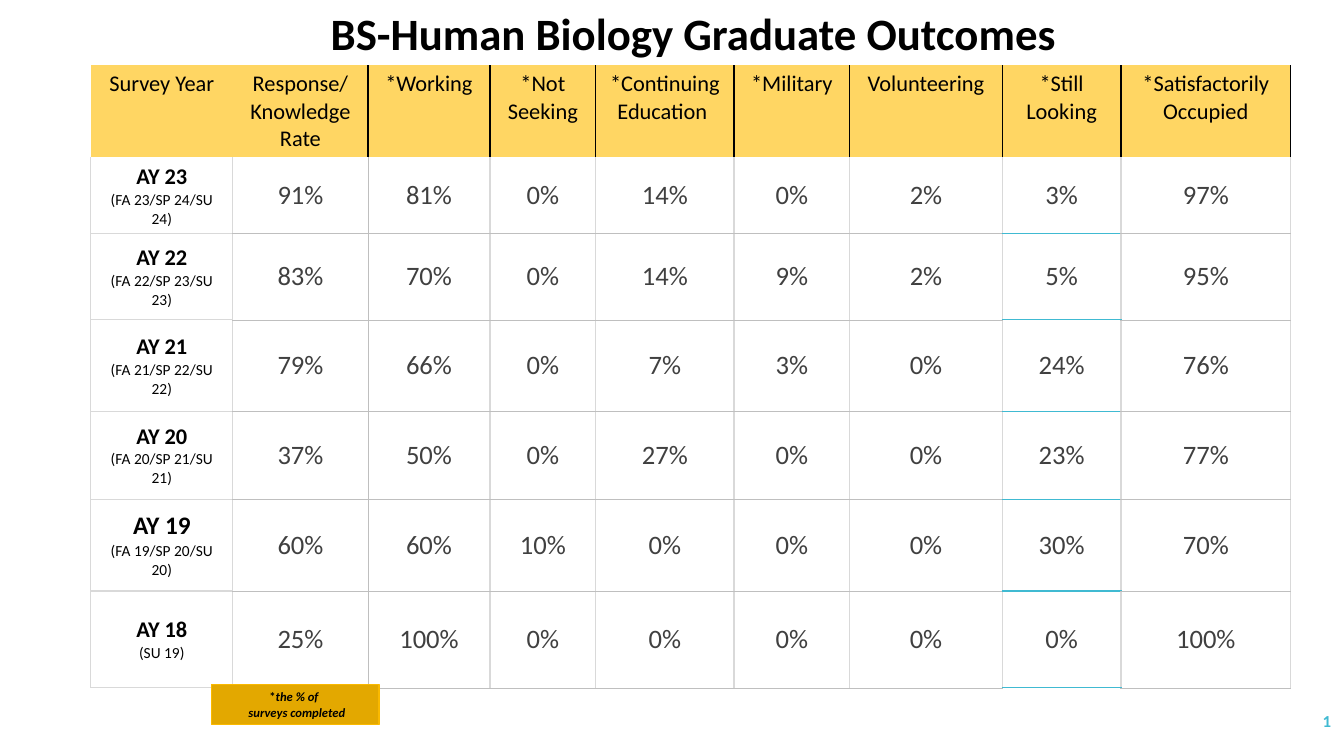
from dataclasses import dataclass

from lxml.etree import SubElement
from pptx import Presentation
from pptx.dml.color import RGBColor as RGB
from pptx.enum.shapes import MSO_SHAPE as Shape
from pptx.enum.text import MSO_ANCHOR as Anchor, PP_ALIGN as Align
from pptx.oxml.ns import qn
from pptx.util import Inches, Pt


@dataclass(frozen=True)
class Theme:
    font: str = "Calibri"
    black: str = "000000"
    white: str = "FFFFFF"
    gray: str = "404040"
    pale: str = "D9D9D9"
    mid: str = "BFBFBF"
    teal: str = "40BAD2"
    head: str = "FFD663"
    gold: str = "E3A800"
    edge: str = "FAB900"
    title: int = 32
    value: int = 19
    big: int = 18
    label: int = 16
    page: int = 12
    term: int = 11
    note: int = 9


T = Theme()

WIDTHS = [1.41, 1.34, 1.21, 1.05, 1.37, 1.15, 1.51, 1.18, 1.68]
HEIGHTS = [0.91, 0.72, 0.86, 0.91, 0.87, 0.91, 0.96]
HEADS = [
    ["Survey Year"],
    ["Response/", "Knowledge", "Rate"],
    ["*Working"],
    ["*Not", "Seeking"],
    ["*Continuing Education "],
    ["*Military"],
    ["Volunteering"],
    ["*Still Looking"],
    ["*Satisfactorily", "Occupied"],
]
YEARS = [
    ("AY 23", "(FA 23/SP 24/SU 24)", T.label, [91, 81, 0, 14, 0, 2, 3, 97]),
    ("AY 22", "(FA 22/SP 23/SU 23)", T.label, [83, 70, 0, 14, 9, 2, 5, 95]),
    ("AY 21", "(FA 21/SP 22/SU 22)", T.label, [79, 66, 0, 7, 3, 0, 24, 76]),
    ("AY 20", "(FA 20/SP 21/SU 21)", T.label, [37, 50, 0, 27, 0, 0, 23, 77]),
    ("AY 19", "(FA 19/SP 20/SU 20)", T.big, [60, 60, 10, 0, 0, 0, 30, 70]),
    ("AY 18", "(SU 19)", T.label, [25, 100, 0, 0, 0, 0, 0, 100]),
]
LOOKING = 7  # column with teal rules


def write(frame, *paras, align=Align.CENTER, after=0, **base):
    """Fill frame; a paragraph is a string or a list of (text, format) runs."""
    frame.word_wrap = True
    for i, para in enumerate(paras):
        p = frame.paragraphs[0] if i == 0 else frame.add_paragraph()
        p.alignment, p.space_after = align, Pt(after)
        for text, extra in [(para, {})] if isinstance(para, str) else para:
            look = {"color": T.black, "bold": False, "italic": False, **base, **extra}
            run = p.add_run()
            run.text = text
            font = run.font
            font.name, font.size = T.font, Pt(look["size"])
            font.bold, font.italic = look["bold"], look["italic"]
            font.color.rgb = RGB.from_string(look["color"])


def rules(row, col):
    """Return the (color, points) of each drawn side of a cell."""
    pale, thin = (T.pale, 1), (T.mid, 0.25)
    if row == 0:
        dark = (T.black, 1)
        return {"L": dark if col > 1 else None, "R": dark if col else None}
    flat = {0: pale, LOOKING: (T.teal, 1)}.get(col, thin)
    return {
        "L": thin if col == 2 else pale,
        "R": thin if col == 1 else pale,
        "T": flat if row > 1 else None,
        "B": flat,
    }


def style(cell, row, col):
    props = cell._tc.get_or_add_tcPr()
    sides = rules(row, col)
    for side in "LRTB":
        line = SubElement(props, qn(f"a:ln{side}"))
        if sides.get(side):
            color, width = sides[side]
            line.set("w", str(Pt(width)))
            fill = SubElement(line, qn("a:solidFill"))
            SubElement(fill, qn("a:srgbClr")).set("val", color)
        else:
            SubElement(line, qn("a:noFill"))
    cell.fill.solid()
    cell.fill.fore_color.rgb = RGB.from_string(T.white if row else T.head)
    cell.margin_left = cell.margin_right = Inches(0.12)
    cell.margin_top = cell.margin_bottom = Inches(0.06)
    cell.vertical_anchor = Anchor.MIDDLE if row else Anchor.TOP


def add_grid(slide, x, y):
    size = Inches(sum(WIDTHS)), Inches(sum(HEIGHTS))
    grid = slide.shapes.add_table(
        len(HEIGHTS), len(WIDTHS), Inches(x), Inches(y), *size
    ).table
    grid.horz_banding = False
    for col, width in zip(grid.columns, WIDTHS):
        col.width = Inches(width)
    for row, height in zip(grid.rows, HEIGHTS):
        row.height = Inches(height)
    for r in range(len(HEIGHTS)):
        for c in range(len(WIDTHS)):
            style(grid.cell(r, c), r, c)

    for c, lines in enumerate(HEADS):
        write(grid.cell(0, c).text_frame, *lines, size=T.label)
    for r, (year, terms, size, rates) in enumerate(YEARS, 1):
        small = [(terms, {"size": T.term, "bold": False})]
        write(grid.cell(r, 0).text_frame, year, small, size=size, bold=True)
        for c, rate in enumerate(rates, 1):
            write(grid.cell(r, c).text_frame, f"{rate}%", size=T.value, color=T.gray)


def add_box(slide, x, y, w, h, fill, edge, width):
    box = slide.shapes.add_shape(
        Shape.RECTANGLE, Inches(x), Inches(y), Inches(w), Inches(h)
    )
    box.shadow.inherit = False
    box.fill.solid()
    box.fill.fore_color.rgb = RGB.from_string(fill)
    box.line.color.rgb = RGB.from_string(edge)
    box.line.width = Pt(width)
    return box


def add_note(slide, x, y, w, h):
    frame = add_box(slide, x, y, w, h, T.gold, T.edge, 0.75).text_frame
    frame.vertical_anchor = Anchor.TOP
    slant = {"italic": True}
    write(
        frame,
        [("*", {}), ("the % of ", slant)],
        [(" surveys completed", slant)],
        size=T.note,
        bold=True,
    )


def add_title(slide, x, y, w, h):
    """Lay a white band across the top and set the title over it."""
    band = add_box(slide, x, y, w, h, T.white, T.white, 0.85)
    title = slide.shapes.title
    band.element.addnext(title.element)
    title.left, title.top = Inches(x + 3.18), Inches(y)
    title.width, title.height = Inches(8.06), Inches(h)
    title.text_frame.vertical_anchor = Anchor.TOP
    write(
        title.text_frame,
        "BS-Human Biology Graduate Outcomes",
        align=Align.LEFT,
        size=T.title,
        bold=True,
    )


def add_page(slide, x, y, w, h):
    box = slide.shapes.add_textbox(Inches(x), Inches(y), Inches(w), Inches(h))
    frame = box.text_frame
    frame.vertical_anchor = Anchor.MIDDLE
    write(frame, "1", align=Align.RIGHT, after=6, size=T.page, color=T.teal, bold=True)


def main():
    deck = Presentation()
    deck.slide_width, deck.slide_height = Inches(13.33), Inches(7.5)
    slide = deck.slides.add_slide(deck.slide_layouts.get_by_name("Title Only"))
    add_page(slide, 11.63, 6.95, 1.67, 0.4)
    add_grid(slide, 0.9, 0.64)
    add_note(slide, 2.1, 6.79, 1.66, 0.4)
    add_title(slide, 0, 0.01, 13.3, 0.63)
    deck.save("out.pptx")


if __name__ == "__main__":
    main()
